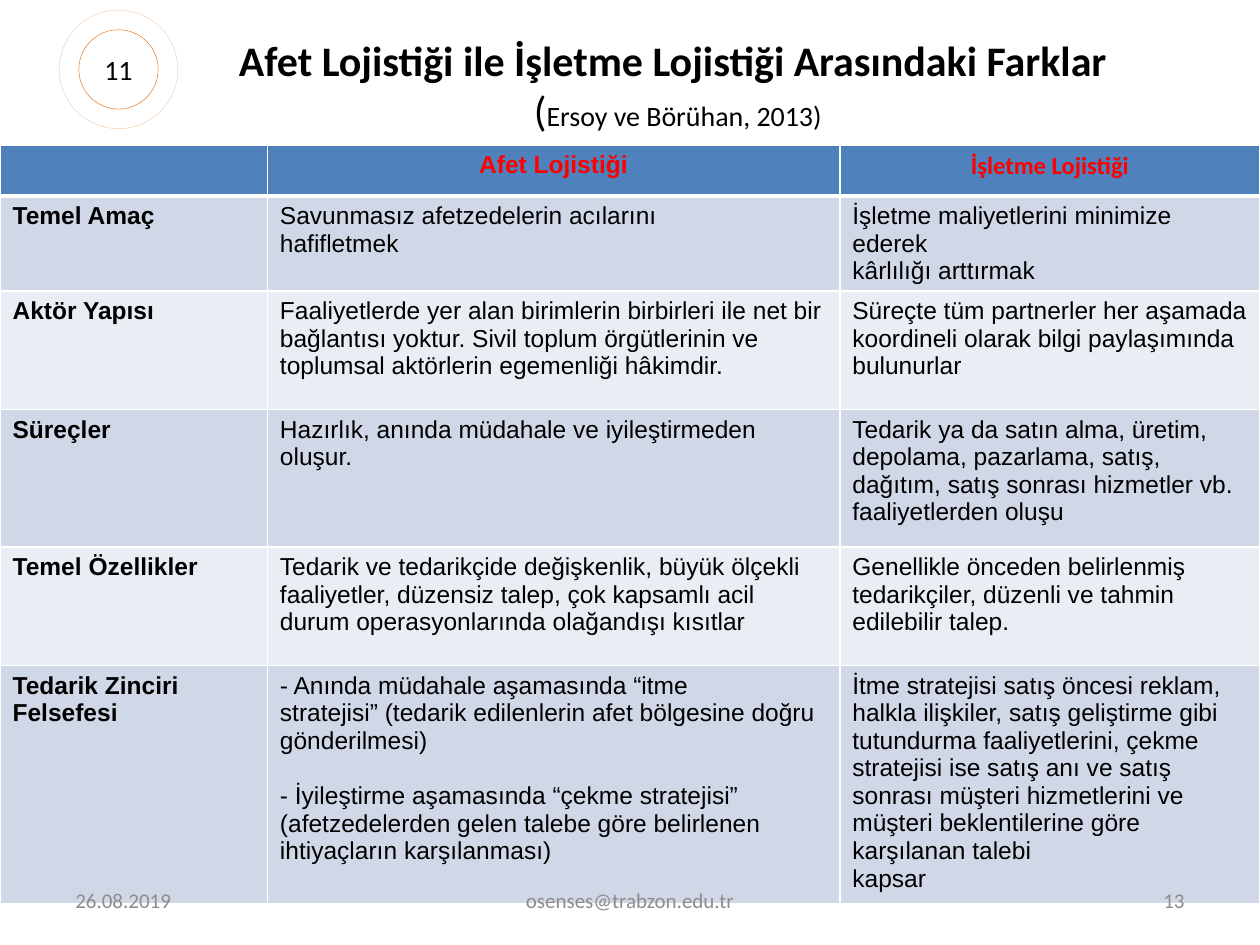
from lxml.etree import SubElement
from pptx import Presentation
from pptx.dml.color import RGBColor
from pptx.enum.shapes import MSO_SHAPE
from pptx.enum.text import MSO_ANCHOR, MSO_AUTO_SIZE, PP_ALIGN
from pptx.oxml.ns import qn
from pptx.util import Cm, Pt

# Content
TITLE = "Afet Lojistiği ile İşletme Lojistiği Arasındaki Farklar "
SOURCE = ("(", "Ersoy ve Börühan, 2013)")
BADGE = "11"
HEADER = ["", "Afet Lojistiği", "İşletme Lojistiği"]
# Each cell is a list of paragraphs
ROWS = [
    (["Temel Amaç"],
     ["Savunmasız afetzedelerin acılarını", "hafifletmek"],
     ["İşletme maliyetlerini minimize ederek", "kârlılığı arttırmak"]),
    (["Aktör Yapısı"],
     ["Faaliyetlerde yer alan birimlerin birbirleri ile net bir bağlantısı yoktur. "
      "Sivil toplum örgütlerinin ve toplumsal aktörlerin egemenliği hâkimdir."],
     ["Süreçte tüm partnerler her aşamada koordineli olarak bilgi paylaşımında",
      "bulunurlar"]),
    (["Süreçler"],
     ["Hazırlık, anında müdahale ve iyileştirmeden oluşur."],
     ["Tedarik ya da satın alma, üretim, depolama, pazarlama, satış, dağıtım, "
      "satış sonrası hizmetler vb. faaliyetlerden oluşu"]),
    (["Temel Özellikler"],
     ["Tedarik ve tedarikçide değişkenlik, büyük ölçekli faaliyetler, düzensiz talep, "
      "çok kapsamlı acil durum operasyonlarında olağandışı kısıtlar"],
     ["Genellikle önceden belirlenmiş tedarikçiler, düzenli ve tahmin edilebilir talep."]),
    (["Tedarik Zinciri", "Felsefesi"],
     ["- Anında müdahale aşamasında “itme",
      "stratejisi” (tedarik edilenlerin afet bölgesine doğru gönderilmesi)",
      "- İyileştirme aşamasında “çekme stratejisi” (afetzedelerden gelen talebe göre "
      "belirlenen ihtiyaçların karşılanması)"],
     ["İtme stratejisi satış öncesi reklam, halkla ilişkiler, satış geliştirme gibi "
      "tutundurma faaliyetlerini, çekme stratejisi ise satış anı ve satış sonrası "
      "müşteri hizmetlerini ve müşteri beklentilerine göre karşılanan talebi",
      "kapsar"]),
]
# Text, left, width, alignment
FOOTER = [
    ("26.08.2019", 1.27, 5.93, PP_ALIGN.LEFT),
    ("osenses@trabzon.edu.tr", 8.68, 8.04, PP_ALIGN.CENTER),
    ("13", 18.2, 5.93, PP_ALIGN.RIGHT),
]

# Theme and measures in cm
THEME = {
    "black": "000000", "white": "FFFFFF", "red": "FF0000", "grey": "8C8C8C",
    "orange": "E46C0A", "header": "4F81BD", "bands": ("D0D8E8", "E9EDF4"),
    "title": 24, "note": 16, "table": 14, "footer": 12,
    "head_font": "Calibri", "body_font": "Arial",
}
COL_WIDTHS = [5.39, 11.54, 8.47]
ROW_HEIGHTS = [0.81, 1.75, 2.39, 2.77, 2.39, 4.8]
TABLE_TOP = 2.92
BADGE_CENTER = (2.39, 1.4)


def rgb(name):
    return RGBColor.from_string(THEME.get(name, name))


def add_run(p, text, size, font="head_font", color="black", bold=False):
    r = p.add_run()
    r.text = text
    r.font.color.rgb = rgb(color)
    style = {"name": THEME[font], "size": Pt(THEME[size]), "bold": bold}
    for key, value in style.items():
        setattr(r.font, key, value)


def format_frame(tf, **extra):
    style = {"word_wrap": True, "auto_size": MSO_AUTO_SIZE.NONE,
             "vertical_anchor": MSO_ANCHOR.MIDDLE, **extra}
    for key, value in style.items():
        setattr(tf, key, value)


def place(s, left, top, width, height):
    s.left, s.top, s.width, s.height = map(Cm, (left, top, width, height))


def add_title(slide):
    s = slide.shapes.title
    place(s, 3.3, 0.91, 20.73, 1.6)
    tf = s.text_frame
    format_frame(tf)
    p = tf.paragraphs[0]
    add_run(p, TITLE, "title", bold=True)
    note = tf.add_paragraph()
    for text, size in zip(SOURCE, ("title", "note")):
        add_run(note, text, size)
    for p in tf.paragraphs:
        p.alignment = PP_ALIGN.CENTER


def set_borders(cell, bottom):
    tc_pr = cell._tc.get_or_add_tcPr()
    for side, width in {"L": 1, "R": 1, "T": 1, "B": bottom}.items():
        ln = SubElement(tc_pr, qn(f"a:ln{side}"), w=str(Pt(width)))
        fill = SubElement(ln, qn("a:solidFill"))
        SubElement(fill, qn("a:srgbClr"), val=THEME["white"])


def fill_cell(cell, lines, fill, bottom=1, align=PP_ALIGN.LEFT, **style):
    set_borders(cell, bottom)
    cell.fill.solid()
    cell.fill.fore_color.rgb = rgb(fill)
    tf = cell.text_frame
    for i, line in enumerate(lines):
        p = tf.add_paragraph() if i else tf.paragraphs[0]
        p.alignment = align
        if i and line.startswith("- "):
            p.space_before = Pt(16)
        add_run(p, line, "table", **style)


def add_comparison(slide):
    frame = slide.shapes.add_table(
        len(ROW_HEIGHTS), len(COL_WIDTHS), Cm(0), Cm(TABLE_TOP),
        Cm(sum(COL_WIDTHS)), Cm(sum(ROW_HEIGHTS)))
    table = frame.table
    for col, width in zip(table.columns, COL_WIDTHS):
        col.width = Cm(width)
    for row, height in zip(table.rows, ROW_HEIGHTS):
        row.height = Cm(height)
    for c, text in enumerate(HEADER):
        fill_cell(table.cell(0, c), [text] if text else [], "header", 3,
                  PP_ALIGN.CENTER, color="red", bold=True,
                  font="head_font" if c == 2 else "body_font")
    for r, row in enumerate(ROWS):
        for c, lines in enumerate(row):
            fill_cell(table.cell(r + 1, c), lines, THEME["bands"][r % 2],
                      font="body_font", bold=c == 0)


def add_circle(slide, diameter):
    x, y = BADGE_CENTER
    s = slide.shapes.add_shape(
        MSO_SHAPE.OVAL, Cm(x - diameter / 2), Cm(y - diameter / 2),
        Cm(diameter), Cm(diameter))
    s.shadow.inherit = False
    s.line.color.rgb = rgb("orange")
    s.line.width = Pt(0.25)
    return s


def add_badge(slide):
    ring = add_circle(slide, 2.39)
    ring.fill.background()
    color = ring.line._ln.find(".//" + qn("a:srgbClr"))
    SubElement(color, qn("a:alpha"), val="33000")

    disc = add_circle(slide, 1.6)
    disc.fill.solid()
    disc.fill.fore_color.rgb = rgb("white")
    format_frame(disc.text_frame, margin_left=0, margin_right=0,
                 margin_top=0, margin_bottom=0)
    p = disc.text_frame.paragraphs[0]
    p.alignment = PP_ALIGN.CENTER
    add_run(p, BADGE, "note")


def add_footer(slide):
    for text, left, width, align in FOOTER:
        s = slide.shapes.add_textbox(Cm(left), Cm(17.65), Cm(width), Cm(1.01))
        format_frame(s.text_frame)
        p = s.text_frame.paragraphs[0]
        p.alignment = align
        add_run(p, text, "footer", color="grey")


def main():
    prs = Presentation()
    prs.slide_width, prs.slide_height = Cm(25.4), Cm(19.05)
    slide = prs.slides.add_slide(prs.slide_layouts[5])
    add_title(slide)
    add_comparison(slide)
    add_badge(slide)
    add_footer(slide)
    prs.save("out.pptx")


if __name__ == "__main__":
    main()
